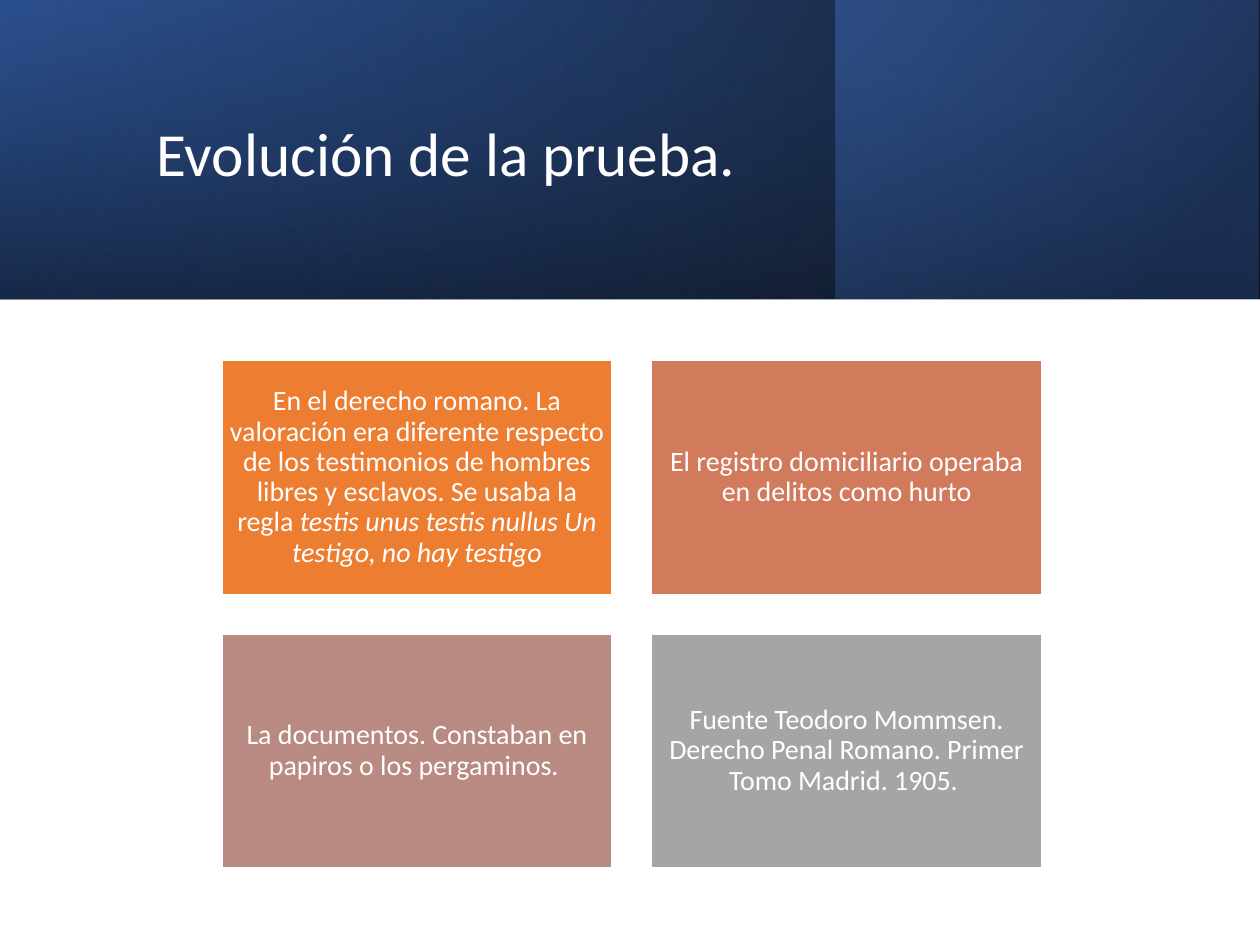
from pptx import Presentation
from pptx.dml.color import RGBColor
from pptx.enum.shapes import MSO_SHAPE
from pptx.enum.text import MSO_ANCHOR, PP_ALIGN
from pptx.oxml import parse_xml
from pptx.oxml.ns import nsdecls, qn
from pptx.util import Inches, Pt

RECT = MSO_SHAPE.RECTANGLE
MIDDLE = MSO_ANCHOR.MIDDLE
LEFT, CENTER = PP_ALIGN.LEFT, PP_ALIGN.CENTER
TITLE_ONLY = 5
FONT = "Calibri"
WHITE = "FFFFFF"

# left, top, width, height, rotation, gradient angle, stops (position %, colour, opacity %)
BANNER = [
    (0, 0, 10, 2.37, 0, 330, [(0, "000000", 96), (100, "2F5597", 100)]),
    (6.63, 0, 3.36, 2.37, 0, 320, [(19, "203864", 68), (100, "4472C4", 48)]),
    (3.81, -3.81, 2.37, 10, 270, 350, [(23, "2F5597", 16), (99, "000000", 45)]),
]

# fill, then (text, italic) runs
CARDS = [
    ("ED7D31", [
        ("En el derecho romano. La valoración era diferente respecto de los "
         "testimonios de hombres libres y esclavos. Se usaba la regla ", False),
        ("testis unus testis nullus Un testigo, no hay testigo", True)]),
    ("D17B5C", [("El registro domiciliario operaba en delitos como hurto", False)]),
    ("B98A82", [("La documentos. Constaban en papiros o los pergaminos. ", False)]),
    ("A5A5A5", [("Fuente Teodoro Mommsen. Derecho Penal Romano. "
                 "Primer Tomo Madrid. 1905. ", False)]),
]
CARD_LEFT, CARD_TOP, CARD_W, CARD_H, GAP = 1.76, 2.86, 3.1, 1.86, 0.31


def color(hex_value):
    return RGBColor.from_string(hex_value)


def add_rect(s, left, top, width, height):
    sp = s.shapes.add_shape(RECT, Inches(left), Inches(top), Inches(width), Inches(height))
    sp.shadow.inherit = False
    return sp


def set_gradient(sp, angle, stops):
    """Fill with a linear gradient whose stops may be translucent."""
    gs = "".join(
        f'<a:gs pos="{pos * 1000}"><a:srgbClr val="{rgb}">'
        f'<a:alpha val="{opacity * 1000}"/></a:srgbClr></a:gs>'
        for pos, rgb, opacity in stops)
    gradient = parse_xml(
        f'<a:gradFill {nsdecls("a")} rotWithShape="1"><a:gsLst>{gs}</a:gsLst>'
        f'<a:lin ang="{angle * 60000}" scaled="0"/></a:gradFill>')
    sp.fill.background()
    props = sp._element.spPr
    props.replace(props.find(qn("a:noFill")), gradient)


def add_banner_layer(s, left, top, width, height, rotation, angle, stops):
    sp = add_rect(s, left, top, width, height)
    sp.rotation = rotation
    sp._element.spPr.find(qn("a:xfrm")).set("flipH", "1")
    sp.line.fill.background()
    set_gradient(sp, angle, stops)


def format_paragraph(p, size, align):
    p.alignment = align
    p.line_spacing = 0.9
    for r in p.runs:
        r.font.name = FONT
        r.font.size = Pt(size)
        r.font.color.rgb = color(WHITE)


def set_title(s, text):
    title = s.shapes.title
    title.left, title.top = Inches(1.14), Inches(0.38)
    title.width, title.height = Inches(7.97), Inches(1.72)
    tf = title.text_frame
    tf.text = text
    tf.vertical_anchor = MIDDLE
    format_paragraph(tf.paragraphs[0], 35, LEFT)
    s.shapes._spTree.append(title._element)  # in front of the banner


def add_card(s, left, top, fill, runs):
    sp = add_rect(s, left, top, CARD_W, CARD_H)
    sp.fill.solid()
    sp.fill.fore_color.rgb = color(fill)
    sp.line.color.rgb = color(WHITE)
    sp.line.width = Pt(1)
    tf = sp.text_frame
    tf.word_wrap = True
    tf.vertical_anchor = MIDDLE
    tf.margin_left = tf.margin_right = Inches(0.05)
    tf.margin_top = tf.margin_bottom = Inches(0.07)
    p = tf.paragraphs[0]
    for text, italic in runs:
        r = p.add_run()
        r.text = text
        r.font.italic = italic
    format_paragraph(p, 16, CENTER)


def main():
    prs = Presentation()
    prs.slide_width, prs.slide_height = Inches(10), Inches(7.5)
    s = prs.slides.add_slide(prs.slide_layouts[TITLE_ONLY])
    for layer in BANNER:
        add_banner_layer(s, *layer)
    set_title(s, "Evolución de la prueba.")
    for i, (fill, runs) in enumerate(CARDS):
        row, col = divmod(i, 2)
        add_card(s, CARD_LEFT + col * (CARD_W + GAP), CARD_TOP + row * (CARD_H + GAP),
                 fill, runs)
    prs.save("out.pptx")


if __name__ == "__main__":
    main()
